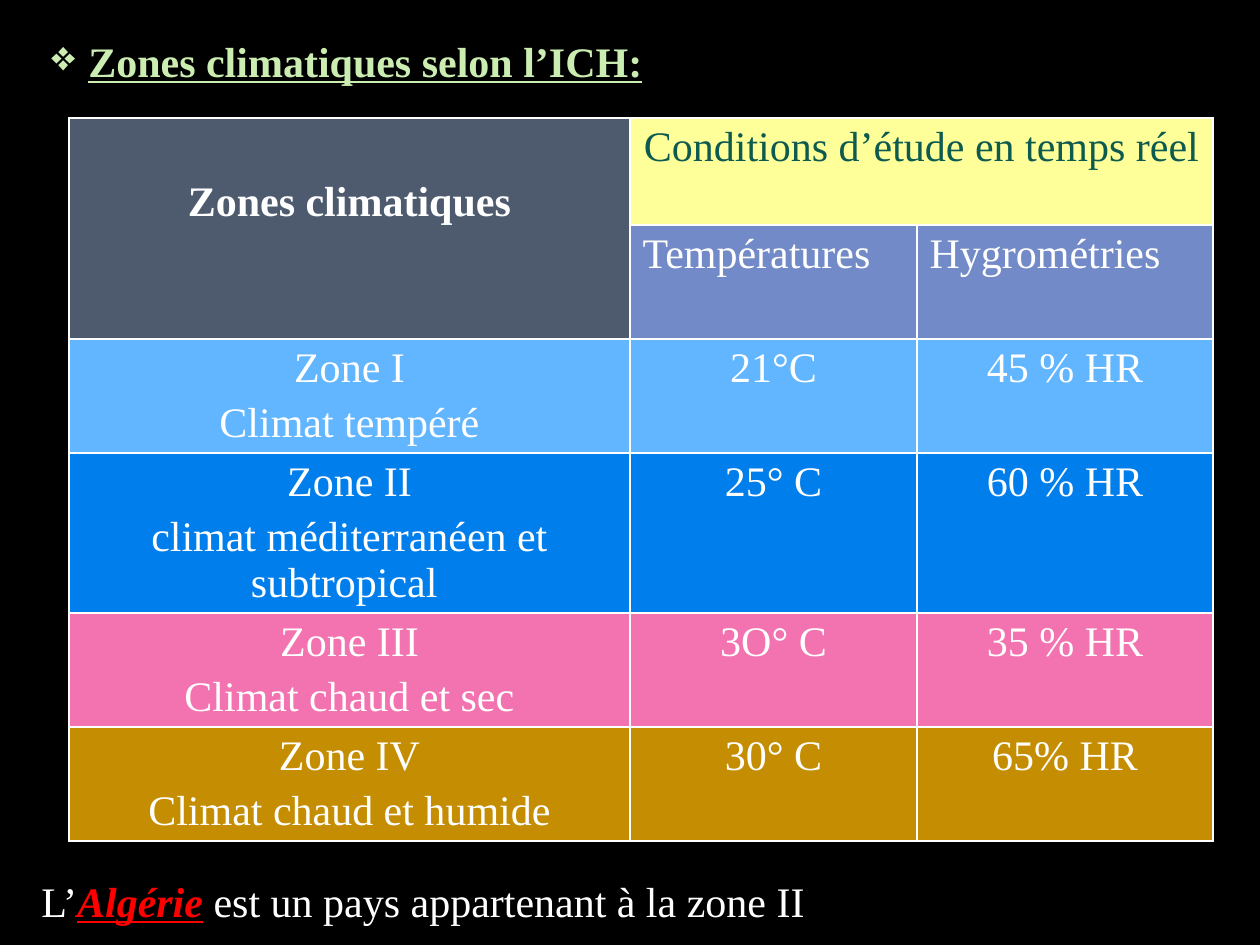
from dataclasses import dataclass

from lxml.etree import SubElement
from pptx import Presentation
from pptx.dml.color import RGBColor as RGB
from pptx.enum.text import MSO_ANCHOR as ANCHOR, PP_ALIGN as ALIGN
from pptx.oxml.ns import qn
from pptx.util import Emu, Pt

EMU_PER_PX = 914400 / 126


@dataclass(frozen=True)
class Theme:
    font: str = "Times New Roman"
    size: float = 24
    gap: float = 4.8
    border: float = 1
    background: str = "000000"
    white: str = "FFFFFF"
    title: str = "CCEDB1"
    accent: str = "FF0000"
    zones: str = "4E5B6F"
    conditions: str = "FFFF99"
    conditions_text: str = "0D5A4F"
    measures: str = "738AC8"


def px(n):
    return Emu(round(n * EMU_PER_PX))


class Deck:
    """Holds the theme and the current slide, and draws its elements."""

    def __init__(self, theme, width, height):
        self.theme = theme
        self.prs = Presentation()
        self.prs.slide_width, self.prs.slide_height = px(width), px(height)
        self.s = self.prs.slides.add_slide(self.prs.slide_layouts[6])
        fill = self.s.background.fill
        fill.solid()
        fill.fore_color.rgb = RGB.from_string(theme.background)

    def run(self, p, text, color=None, bold=False, italic=False, underline=False):
        r = p.add_run()
        r.text = text
        f = r.font
        f.name, f.size = self.theme.font, Pt(self.theme.size)
        f.bold, f.italic, f.underline = bold, italic, underline
        f.color.rgb = RGB.from_string(color or self.theme.white)

    def text(self, x, y, w, h):
        tf = self.s.shapes.add_textbox(px(x), px(y), px(w), px(h)).text_frame
        tf.word_wrap = True
        return tf.paragraphs[0]

    def bullet(self, p, char, indent):
        pPr = p._p.get_or_add_pPr()
        pPr.set("marL", str(px(indent)))
        pPr.set("indent", str(-px(indent)))
        SubElement(pPr, qn("a:buChar")).set("char", char)

    def table(self, x, y, cols, rows):
        shape = self.s.shapes.add_table(
            len(rows), len(cols), px(x), px(y), px(sum(cols)), px(sum(rows)))
        tbl = shape.table
        tbl.first_row = tbl.horz_banding = False
        for col, width in zip(tbl.columns, cols):
            col.width = px(width)
        for row, height in zip(tbl.rows, rows):
            row.height = px(height)
        for cell in tbl.iter_cells():
            self.borders(cell)
        return tbl

    def borders(self, cell):
        tcPr = cell._tc.get_or_add_tcPr()
        for side in "LRTB":
            ln = SubElement(tcPr, qn(f"a:ln{side}"), w=str(Pt(self.theme.border)))
            fill = SubElement(ln, qn("a:solidFill"))
            SubElement(fill, qn("a:srgbClr"), val=self.theme.white)

    def cell(self, cell, text, fill, align=ALIGN.CENTER, top=6, **fmt):
        cell.fill.solid()
        cell.fill.fore_color.rgb = RGB.from_string(fill)
        cell.vertical_anchor = ANCHOR.TOP
        cell.margin_top = px(top)
        tf = cell.text_frame
        for i, line in enumerate(text.split("\n")):
            p = tf.add_paragraph() if i else tf.paragraphs[0]
            p.alignment = align
            p.space_before = Pt(self.theme.gap)
            self.run(p, line, **fmt)


def main():
    t = Theme()
    d = Deck(t, 1260, 945)

    tbl = d.table(69, 118, [561, 287, 296], [107, 114, 114, 160, 114, 114])
    tbl.cell(0, 0).merge(tbl.cell(1, 0))
    tbl.cell(0, 1).merge(tbl.cell(0, 2))
    d.cell(tbl.cell(0, 0), "Zones climatiques", t.zones, top=61, bold=True)
    d.cell(tbl.cell(0, 1), "Conditions d’étude en temps réel", t.conditions,
           color=t.conditions_text)
    for c, name in enumerate(["Températures", "Hygrométries"], 1):
        d.cell(tbl.cell(1, c), name, t.measures, align=ALIGN.LEFT)

    zones = [
        ("61B6FF", "Zone I\nClimat tempéré", "21°C", "45 % HR"),
        ("007EEB", "Zone II\nclimat méditerranéen et subtropical ", "25° C", "60 % HR"),
        ("F273AF", "Zone III\nClimat chaud et sec", "3O° C", "35 % HR"),
        ("C58D01", "Zone IV\nClimat chaud et humide", "30° C", "65% HR"),
    ]
    for r, (fill, *values) in enumerate(zones, 2):
        for c, value in enumerate(values):
            d.cell(tbl.cell(r, c), value, fill)

    p = d.text(39, 29, 1172, 58)
    d.bullet(p, "❖", 37)
    d.run(p, "Zones climatiques selon l’ICH:", color=t.title, bold=True, underline=True)

    p = d.text(29, 869, 1200, 58)
    d.run(p, "L’")
    d.run(p, "Algérie", color=t.accent, bold=True, italic=True, underline=True)
    d.run(p, " est un pays appartenant à la zone II")

    d.prs.save("out.pptx")


if __name__ == "__main__":
    main()
